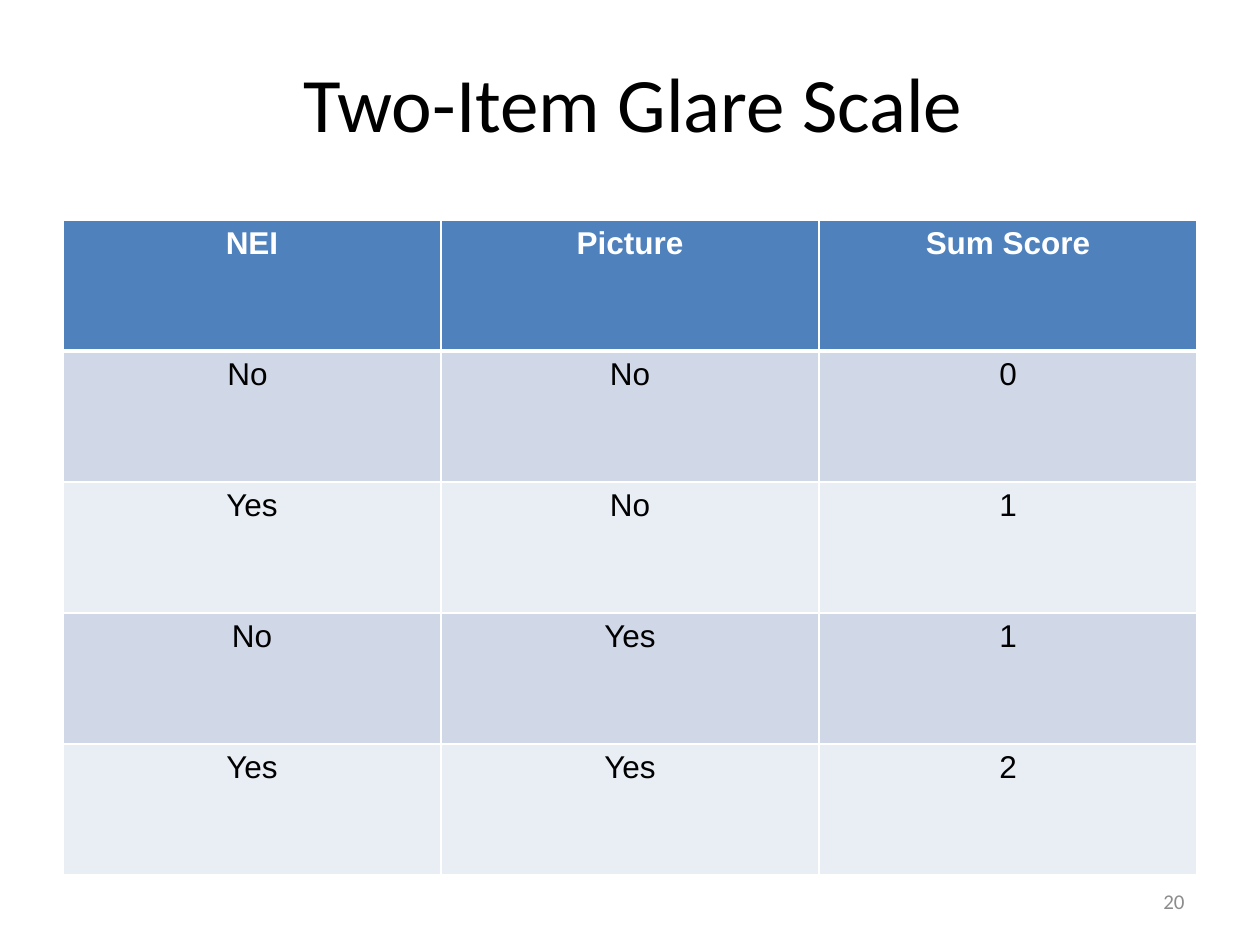
from lxml.etree import SubElement
from pptx import Presentation
from pptx.dml.color import RGBColor
from pptx.enum.text import MSO_ANCHOR as Anchor, PP_ALIGN as Align
from pptx.oxml.ns import qn
from pptx.util import Emu, Pt

PX_PER_INCH = 126


def px(length):
    return Emu(round(length * 914400 / PX_PER_INCH))


def color(hex_code):
    return RGBColor.from_string(hex_code)


class SlideBuilder:
    heading_font = "Calibri"
    table_font = "Arial"
    white = "FFFFFF"
    black = "000000"
    gray = "8C8C8C"
    header_fill = "4F81BD"
    band_fills = ("D0D8E8", "E9EDF4")

    def __init__(self, deck):
        self.slide = deck.slides.add_slide(deck.slide_layouts[6])

    def style(self, para, font, size, hex_code, align, bold=False):
        para.alignment = align
        for span in para.runs:
            span.font.name = font
            span.font.size = Pt(size)
            span.font.bold = bold
            span.font.color.rgb = color(hex_code)

    def text(self, words, left, top, width, height, size, hex_code, align):
        box = self.slide.shapes.add_textbox(px(left), px(top), px(width), px(height))
        frame = box.text_frame
        frame.word_wrap = True
        frame.vertical_anchor = Anchor.MIDDLE
        frame.text = words
        self.style(frame.paragraphs[0], self.heading_font, size, hex_code, align)

    def border(self, cell, side, points):
        properties = cell._tc.get_or_add_tcPr()
        line = SubElement(properties, qn(f"a:ln{side}"), w=str(Pt(points)))
        fill = SubElement(line, qn("a:solidFill"))
        SubElement(fill, qn("a:srgbClr"), val=self.white)

    def table(self, rows, left, top, column_width, row_height):
        columns = len(rows[0])
        grid = self.slide.shapes.add_table(
            len(rows), columns, px(left), px(top),
            px(column_width * columns), px(row_height * len(rows))).table
        for row_index, row in enumerate(rows):
            header = row_index == 0
            fill = self.header_fill if header else self.band_fills[(row_index - 1) % 2]
            for column_index, words in enumerate(row):
                cell = grid.cell(row_index, column_index)
                for side in "LRTB":
                    thick = (header and side == "B") or (row_index == 1 and side == "T")
                    self.border(cell, side, 3 if thick else 1)
                cell.fill.solid()
                cell.fill.fore_color.rgb = color(fill)
                cell.text_frame.text = words
                self.style(cell.text_frame.paragraphs[0], self.table_font, 18,
                           self.white if header else self.black, Align.CENTER, header)


def main():
    deck = Presentation()
    deck.slide_width, deck.slide_height = px(1260), px(945)
    page = SlideBuilder(deck)
    page.text(" Two-Item Glare Scale", 10, 23, 1229, 157, 44, page.black, Align.CENTER)
    page.table([
        ("NEI", "Picture", "Sum Score"),
        ("No ", "No", "0"),
        ("Yes", "No", "1"),
        ("No", "Yes", "1"),
        ("Yes", "Yes", "2"),
    ], 63, 220, 378, 131)
    page.text("20", 903, 876, 294, 50, 12, page.gray, Align.RIGHT)
    deck.save("out.pptx")


if __name__ == "__main__":
    main()
